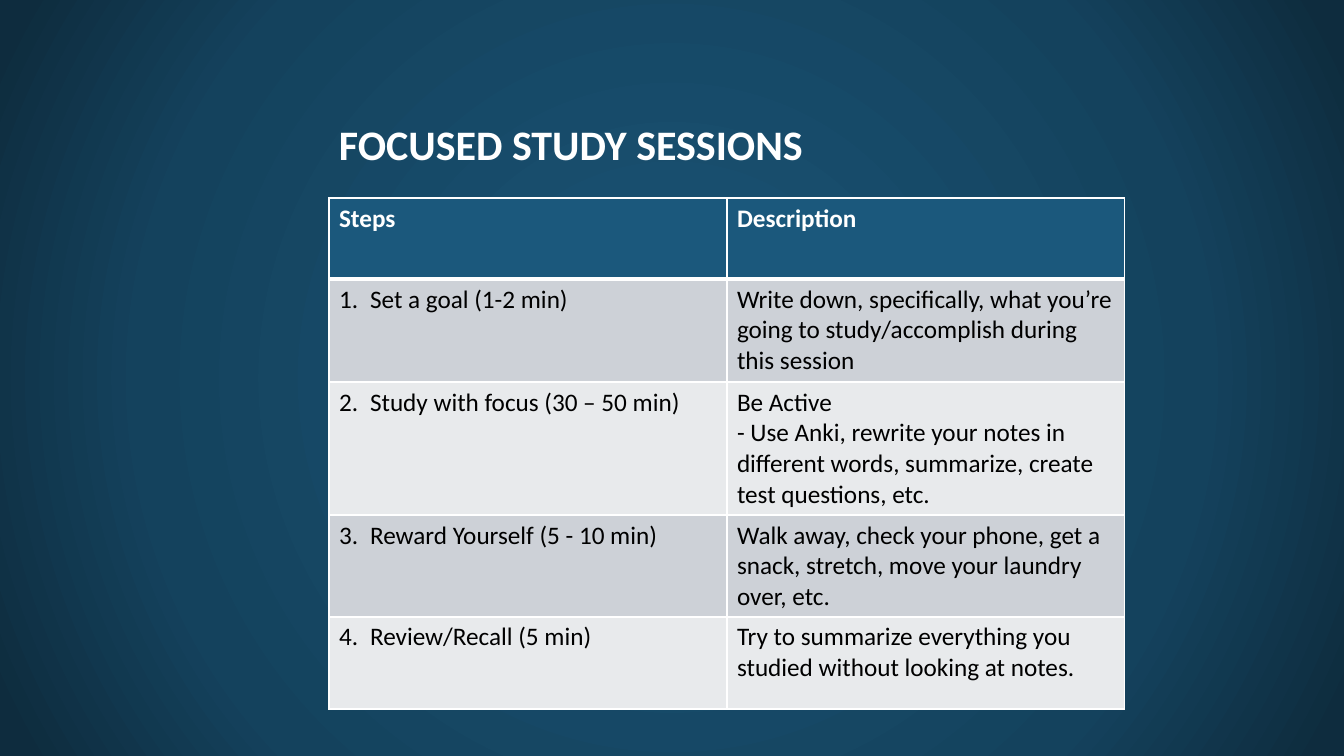
from lxml import etree
from pptx import Presentation
from pptx import util as u
from pptx.dml.color import RGBColor
from pptx.enum import text
from pptx.oxml import ns

EMU_PER_PX = 12192000 / 1344
WHITE = RGBColor(0xFF, 0xFF, 0xFF)
BLACK = RGBColor(0x00, 0x00, 0x00)
HEADER_BLUE = RGBColor(0x1B, 0x58, 0x7C)
BAND_DARK = RGBColor(0xCD, 0xD1, 0xD7)
BAND_LIGHT = RGBColor(0xE8, 0xEA, 0xEC)
CENTRE_BLUE = RGBColor(0x18, 0x4E, 0x6E)
MIDDLE_BLUE = RGBColor(0x14, 0x42, 0x5D)
EDGE_BLUE = RGBColor(0x0E, 0x2C, 0x3E)
BACKDROP_STOPS = [(0, CENTRE_BLUE), (23, CENTRE_BLUE), (69, MIDDLE_BLUE), (97, EDGE_BLUE)]

TITLE_FONT = {"name": "Calibri", "size": u.Pt(30), "bold": True}
HEADER_FONT = {"name": "Calibri", "size": u.Pt(18), "bold": True}
BODY_FONT = {"name": "Calibri", "size": u.Pt(18), "bold": False}

NUMBER_TAB = 31
COLUMN_WIDTH = 398
ROW_HEIGHTS = [81, 103, 133, 102, 92]
SESSION_STEPS = [
    ("Steps", "Description"),
    ("1.\tSet a goal (1-2 min)",
     "Write down, specifically, what you’re going to study/accomplish during this session"),
    ("2.\tStudy with focus (30 – 50 min)",
     "Be Active\n- Use Anki, rewrite your notes in different words, "
     "summarize, create test questions, etc."),
    ("3.\tReward Yourself (5 - 10 min)",
     "Walk away, check your phone, get a snack, stretch, move your laundry over, etc."),
    ("4.\tReview/Recall (5 min)",
     "Try to summarize everything you studied without looking at notes."),
]


def px(length):
    """Turn pixels into EMU."""
    return u.Emu(round(length * EMU_PER_PX))


def add_xml(parent, tag, **attributes):
    """Append a DrawingML element and return it."""
    return etree.SubElement(parent, ns.qn(tag), attributes)


def style_font(font, formats, color):
    """Apply a set of format values and a colour to a font."""
    for name, value in formats.items():
        setattr(font, name, value)
    font.color.rgb = color


def paint_backdrop(slide):
    """Fill the slide background with a circular gradient."""
    slide.background.fill.gradient()
    gradient = slide.element.find(".//" + ns.qn("a:gradFill"))
    gradient.clear()
    stops = add_xml(gradient, "a:gsLst")
    for percent, color in BACKDROP_STOPS:
        stop = add_xml(stops, "a:gs", pos=str(percent * 1000))
        add_xml(stop, "a:srgbClr", val=str(color))
    circle = add_xml(gradient, "a:path", path="circle")
    add_xml(circle, "a:fillToRect", l="50000", t="50000", r="50000", b="50000")


def add_title(slide, wording):
    """Add the slide heading."""
    heading = slide.shapes.add_textbox(px(329), px(74), px(571), px(139)).text_frame
    heading.word_wrap = True
    heading.vertical_anchor = text.MSO_ANCHOR.MIDDLE
    heading.text = wording
    style_font(heading.paragraphs[0].font, TITLE_FONT, WHITE)


def border_cell(cell, top, bottom):
    """Draw white borders of the given point widths around a cell."""
    properties = cell._tc.get_or_add_tcPr()
    for tag, width in (("a:lnL", 1), ("a:lnR", 1), ("a:lnT", top), ("a:lnB", bottom)):
        border = add_xml(properties, tag, w=str(u.Pt(width)))
        paint = add_xml(border, "a:solidFill")
        add_xml(paint, "a:srgbClr", val=str(WHITE))


def fill_cell(cell, wording, row):
    """Write one cell and format it according to its row."""
    border_cell(cell, top=3 if row == 1 else 1, bottom=3 if row == 0 else 1)
    cell.fill.solid()
    band = BAND_DARK if row % 2 else BAND_LIGHT
    cell.fill.fore_color.rgb = band if row else HEADER_BLUE
    cell.text = wording
    for paragraph in cell.text_frame.paragraphs:
        if "\t" in paragraph.text:
            tabs = add_xml(paragraph._p.get_or_add_pPr(), "a:tabLst")
            add_xml(tabs, "a:tab", pos=str(px(NUMBER_TAB)), algn="l")
        style_font(paragraph.font, BODY_FONT if row else HEADER_FONT, BLACK if row else WHITE)


def add_steps_table(slide):
    """Add the table of study steps."""
    steps = slide.shapes.add_table(
        len(SESSION_STEPS), 2, px(329), px(198), px(2 * COLUMN_WIDTH), px(sum(ROW_HEIGHTS))
    ).table
    for column in steps.columns:
        column.width = px(COLUMN_WIDTH)
    for row, (height, wordings) in enumerate(zip(ROW_HEIGHTS, SESSION_STEPS)):
        steps.rows[row].height = px(height)
        for column, wording in enumerate(wordings):
            fill_cell(steps.cell(row, column), wording, row)


def main():
    """Build the study session slide and save it."""
    deck = Presentation()
    deck.slide_width, deck.slide_height = px(1344), px(756)
    slide = deck.slides.add_slide(deck.slide_layouts[6])
    paint_backdrop(slide)
    add_title(slide, "FOCUSED STUDY SESSIONS")
    add_steps_table(slide)
    deck.save("out.pptx")


if __name__ == "__main__":
    main()
